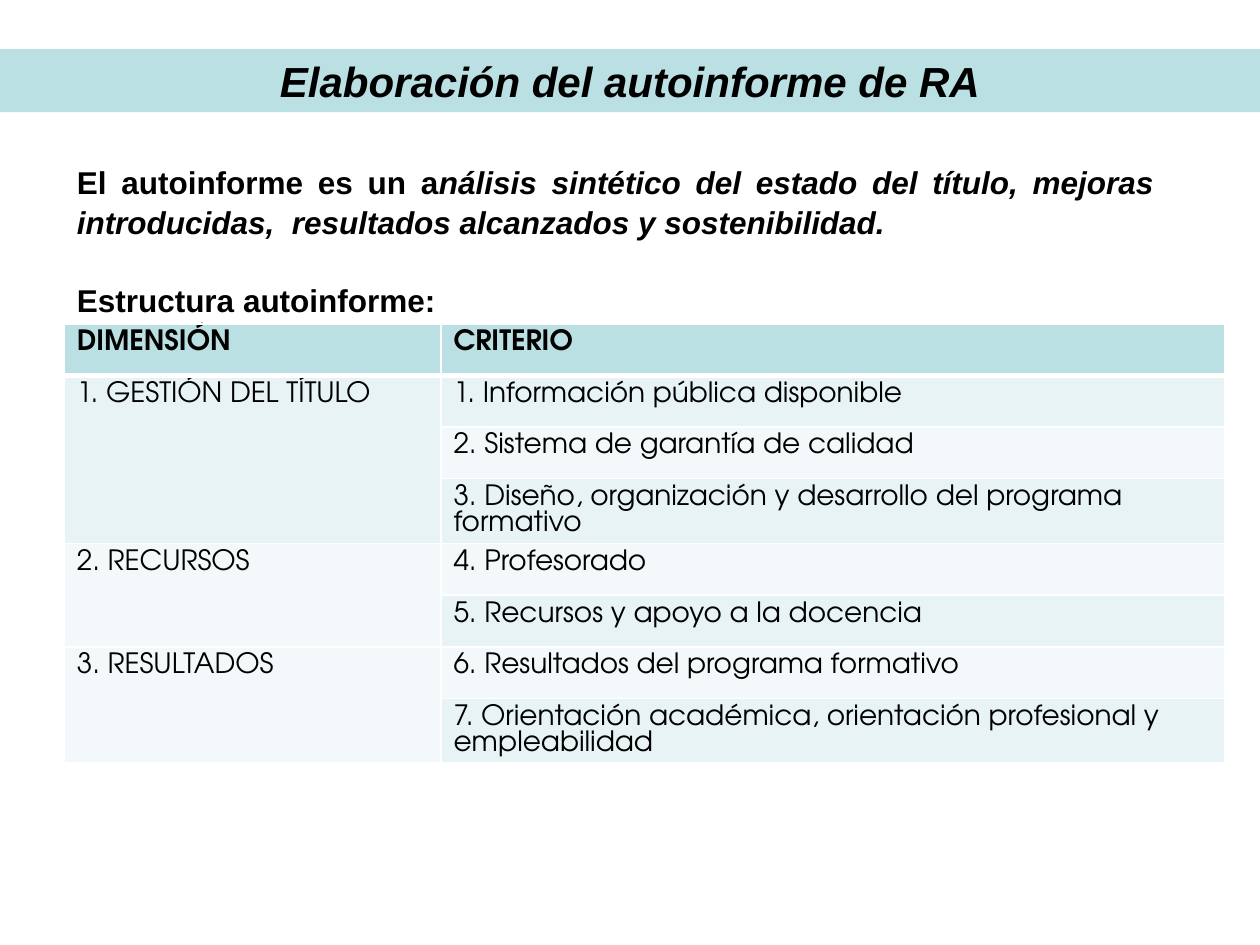
"""Build the slide on the structure of the self-report."""
import pptx
import pptx.util
import pptx.dml.color
import pptx.enum.text
import pptx.oxml
import pptx.oxml.ns

Inches, Pt = pptx.util.Inches, pptx.util.Pt
ALIGN = pptx.enum.text.PP_ALIGN
COLORS = {"band": "BBE0E3", "odd": "E7F3F4", "even": "F3F9FA",
          "line": "FFFFFF", "text": "000000"}
TITLE = "Elaboración del autoinforme de RA"
INTRO = ("El autoinforme es un a",
         "nálisis sintético del estado del título, mejoras introducidas,  "
         "resultados alcanzados y sostenibilidad.")
LEAD = "Estructura autoinforme:"
HEAD = ("DIMENSIÓN", "CRITERIO")
GROUPS = [
    ("1. GESTIÓN DEL TÍTULO", [
        "1. Información pública disponible",
        "2. Sistema de garantía de calidad",
        "3. Diseño, organización y desarrollo del programa formativo"]),
    ("2. RECURSOS", [
        "4. Profesorado",
        "5. Recursos y apoyo a la docencia"]),
    ("3. RESULTADOS", [
        "6. Resultados del programa formativo",
        "7. Orientación académica, orientación profesional y empleabilidad"]),
]
WIDTHS = (2.99, 6.22)
ROW = 0.41


def color(name):
    return pptx.dml.color.RGBColor.from_string(COLORS[name])


def write(para, text, size=18, font="Arial", bold=True, italic=False):
    run = para.add_run()
    run.text = text
    run.font.size, run.font.name = Pt(size), font
    run.font.bold, run.font.italic = bold, italic
    run.font.color.rgb = color("text")


def place(shape, left, top, width, height):
    shape.left, shape.top = Inches(left), Inches(top)
    shape.width, shape.height = Inches(width), Inches(height)
    shape.text_frame.auto_size = pptx.enum.text.MSO_AUTO_SIZE.NONE
    shape.text_frame.word_wrap = True


def plain(para, before=0):
    para.alignment = ALIGN.JUSTIFY
    para.line_spacing, para.space_before = 1.05, Pt(before)
    props = para._p.get_or_add_pPr()
    props.set("marL", "0")
    props.set("indent", "0")
    props.append(pptx.oxml.parse_xml(
        f'<a:buNone {pptx.oxml.ns.nsdecls("a")}/>'))


def edge(cell, base):
    props = cell._tc.get_or_add_tcPr()
    for side, width in zip("LRTB", (1, 1, 1, base)):
        props.append(pptx.oxml.parse_xml(
            f'<a:ln{side} {pptx.oxml.ns.nsdecls("a")} w="{Pt(width)}">'
            f'<a:solidFill><a:srgbClr val="{COLORS["line"]}"/></a:solidFill>'
            f'</a:ln{side}>'))


def fill(cell, text, tone, bold=False, base=1):
    edge(cell, base)
    cell.fill.solid()
    cell.fill.fore_color.rgb = color(tone)
    if text:
        write(cell.text_frame.paragraphs[0], text, size=16,
              font="TeX Gyre Adventor", bold=bold)


def build_table(slide):
    count = 1 + sum(len(items) for _, items in GROUPS)
    table = slide.shapes.add_table(
        count, 2, Inches(0.51), Inches(2.57),
        Inches(sum(WIDTHS)), Inches(ROW * count)).table
    for col, width in zip(table.columns, WIDTHS):
        col.width = Inches(width)
    for col, text in enumerate(HEAD):
        fill(table.cell(0, col), text, "band", bold=True, base=3)
    row = 1
    for name, items in GROUPS:
        first = row
        group = "odd" if first % 2 else "even"
        for item in items:
            fill(table.cell(row, 0), name if row == first else "", group)
            fill(table.cell(row, 1), item, "odd" if row % 2 else "even")
            row += 1
        table.cell(first, 0).merge(table.cell(row - 1, 0))


def main():
    deck = pptx.Presentation()
    deck.slide_width, deck.slide_height = Inches(10), Inches(7.5)
    slide = deck.slides.add_slide(deck.slide_layouts[1])
    title, body = slide.placeholders

    place(title, 0, 0.39, 10, 0.5)
    title.fill.solid()
    title.fill.fore_color.rgb = color("band")
    head = title.text_frame.paragraphs[0]
    head.alignment = ALIGN.CENTER
    write(head, TITLE, size=24, italic=True)

    place(body, 0.51, 1.23, 8.75, 5.25)
    intro = body.text_frame.paragraphs[0]
    plain(intro)
    for text, slant in zip(INTRO, (False, True)):
        write(intro, text, italic=slant)
    lead = body.text_frame.add_paragraph()
    plain(lead, before=21.7)
    write(lead, LEAD)

    build_table(slide)
    deck.save("out.pptx")


if __name__ == "__main__":
    main()
